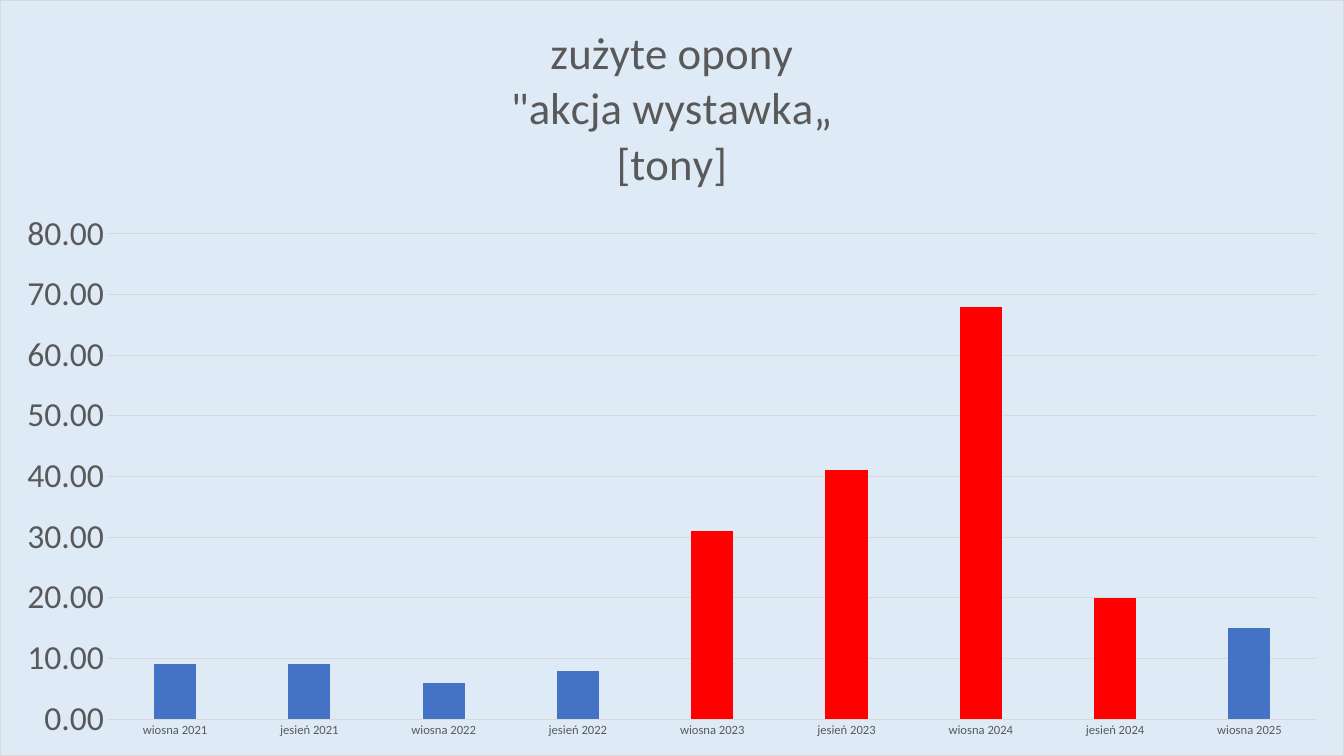
import pptx
import pptx.chart.data
import pptx.dml.color
import pptx.enum.chart
import pptx.oxml
import pptx.oxml.ns
import pptx.util
from pptx.util import Inches

theme = {
    "font": "Calibri",
    "text": "595959",
    "line": "D9D9D9",
    "background": "DEEBF7",
    "bar": "4472C4",
    "highlight": "FF0000",
    "title_size": 32,
    "value_size": 24,
    "category_size": 9,
    "line_width": 0.75,
}


def style_font(font, size):
    font.name = theme["font"]
    font.size = pptx.util.Pt(size)
    font.bold = False
    font.color.rgb = pptx.dml.color.RGBColor.from_string(theme["text"])


def style_line(line):
    line.color.rgb = pptx.dml.color.RGBColor.from_string(theme["line"])
    line.width = pptx.util.Pt(theme["line_width"])


tonnes = {
    "wiosna 2021": 9,
    "jesień 2021": 9,
    "wiosna 2022": 6,
    "jesień 2022": 8,
    "wiosna 2023": 31,
    "jesień 2023": 41,
    "wiosna 2024": 68,
    "jesień 2024": 20,
    "wiosna 2025": 15,
}
highlighted = ["wiosna 2023", "jesień 2023", "wiosna 2024", "jesień 2024"]
title_lines = ["zużyte opony", '"akcja wystawka„', "[tony]"]

deck = pptx.Presentation()
deck.slide_width = Inches(13.33)
deck.slide_height = Inches(7.5)
page = deck.slides.add_slide(deck.slide_layouts[6])

data = pptx.chart.data.CategoryChartData(number_format="0.00")
data.categories = list(tonnes)
data.add_series("Series 1", list(tonnes.values()))
chart = page.shapes.add_chart(
    pptx.enum.chart.XL_CHART_TYPE.COLUMN_CLUSTERED,
    0, 0, deck.slide_width, deck.slide_height, data,
).chart
chart.has_legend = False
style_font(chart.font, 10)

chart.has_title = True
title = chart.chart_title.text_frame
for index, line in enumerate(title_lines):
    para = title.paragraphs[0] if index == 0 else title.add_paragraph()
    span = para.add_run()
    span.text = line
    style_font(span.font, theme["title_size"])

plot = chart.plots[0]
plot.gap_width = 219
plot.overlap = -27
plot.vary_by_categories = False
series = plot.series[0]
series.format.fill.solid()
series.format.fill.fore_color.rgb = pptx.dml.color.RGBColor.from_string(theme["bar"])
for index, season in enumerate(tonnes):
    if season in highlighted:
        fill = series.points[index].format.fill
        fill.solid()
        fill.fore_color.rgb = pptx.dml.color.RGBColor.from_string(theme["highlight"])

for axis, size in (
    (chart.category_axis, theme["category_size"]),
    (chart.value_axis, theme["value_size"]),
):
    axis.major_tick_mark = pptx.enum.chart.XL_TICK_MARK.NONE
    axis.minor_tick_mark = pptx.enum.chart.XL_TICK_MARK.NONE
    style_font(axis.tick_labels.font, size)
style_line(chart.category_axis.format.line)

values = chart.value_axis
values.minimum_scale = 0
values.maximum_scale = 80
values.major_unit = 10
values.format.line.fill.background()
values.has_major_gridlines = True
style_line(values.major_gridlines.format.line)
values.tick_labels.number_format = "0.00"
values.tick_labels.number_format_is_linked = False

plot_top = Inches(2.32) / deck.slide_height
plot_height = Inches(4.82) / deck.slide_height
namespaces = pptx.oxml.ns.nsdecls("c", "a")
plot_area = chart.element.chart.plotArea
for layout in plot_area.findall(pptx.oxml.ns.qn("c:layout")):
    plot_area.remove(layout)
plot_area.insert(0, pptx.oxml.parse_xml(
    f'<c:layout {namespaces}><c:manualLayout><c:layoutTarget val="inner"/>'
    '<c:xMode val="edge"/><c:yMode val="edge"/>'
    f'<c:x val="0.08"/><c:y val="{plot_top}"/>'
    f'<c:w val="0.9"/><c:h val="{plot_height}"/></c:manualLayout></c:layout>'
))
chart.element.chart.addnext(pptx.oxml.parse_xml(
    f'<c:spPr {namespaces}><a:solidFill><a:srgbClr val="{theme["background"]}"/></a:solidFill>'
    f'<a:ln w="{pptx.util.Pt(theme["line_width"])}"><a:solidFill>'
    f'<a:srgbClr val="{theme["line"]}"/></a:solidFill></a:ln></c:spPr>'
))

deck.save("out.pptx")
